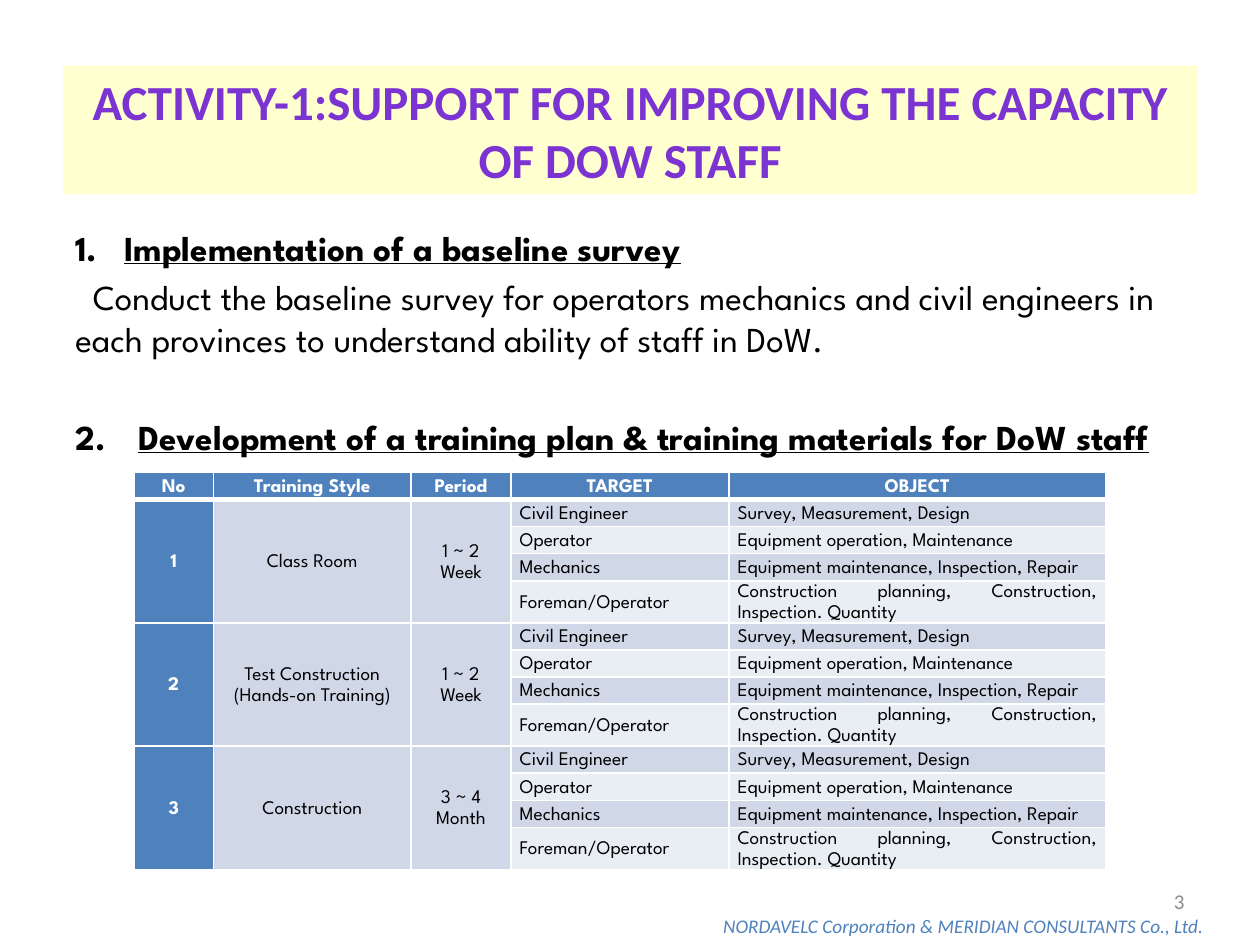
from dataclasses import dataclass

import pptx
import pptx.dml.color
import pptx.enum.shapes
import pptx.enum.text
import pptx.oxml
import pptx.oxml.ns
import pptx.util
from lxml import etree

Pt = pptx.util.Pt
ALIGN = pptx.enum.text.PP_ALIGN
MIDDLE = pptx.enum.text.MSO_ANCHOR.MIDDLE


@dataclass(frozen=True)
class Theme:
    heading_font: str = "Calibri"
    body_font: str = "League Spartan"
    black: str = "000000"
    white: str = "FFFFFF"
    purple: str = "7B34D2"
    yellow: str = "FFFF66"
    blue: str = "4F81BD"
    grey: str = "8C8C8C"
    dark_band: str = "D0D8E8"
    light_band: str = "E9EDF4"
    title_size: float = 28
    body_size: float = 20
    number_size: float = 12
    small_size: float = 11


THEME = Theme()
HEADINGS = ["No", "Training Style", "Period", "TARGET", "OBJECT"]
COURSES = [
    (["1"], ["Class Room"], ["1 ~ 2", "Week"]),
    (["2"], ["Test Construction", "(Hands-on Training)"], ["1 ~ 2", "Week"]),
    (["3"], ["Construction"], ["3 ~ 4", "Month"]),
]
TARGETS = [
    ("Civil Engineer", "Survey, Measurement, Design"),
    ("Operator", "Equipment operation, Maintenance"),
    ("Mechanics", "Equipment maintenance, Inspection, Repair"),
    ("Foreman/Operator", "Construction planning, Construction, Inspection. Quantity"),
]
COLUMN_WIDTHS = [45.5, 113, 57, 124.5, 215.5]
ROW_HEIGHT, TALL_ROW_HEIGHT = 15.5, 24


def rgb(color):
    return pptx.dml.color.RGBColor.from_string(color)


def add_child(parent, tag, **attributes):
    child = etree.SubElement(parent, pptx.oxml.ns.qn(tag))
    for name, value in attributes.items():
        child.set(name, str(value))
    return child


def add_span(para, text, font, size, color, bold=False, italic=False, underline=False):
    span = para.add_run()
    span.text = text
    span.font.name = font
    span.font.size = Pt(size)
    span.font.color.rgb = rgb(color)
    span.font.bold, span.font.italic, span.font.underline = bold, italic, underline


def add_text_box(page, box):
    frame = page.shapes.add_textbox(*map(Pt, box)).text_frame
    frame.word_wrap = True
    return frame


def add_title(page, box):
    banner = page.shapes.add_shape(
        pptx.enum.shapes.MSO_SHAPE.RECTANGLE, *map(Pt, box))
    banner.shadow.inherit = False
    banner.line.fill.background()
    banner.fill.solid()
    banner.fill.fore_color.rgb = rgb(THEME.yellow)
    fill_color = banner.fill._xPr.find(".//" + pptx.oxml.ns.qn("a:srgbClr"))
    add_child(fill_color, "a:alpha", val=30000)
    frame = banner.text_frame
    frame.word_wrap = True
    frame.vertical_anchor = MIDDLE
    para = frame.paragraphs[0]
    para.alignment = ALIGN.CENTER
    add_span(para, "ACTIVITY-1:SUPPORT FOR IMPROVING THE CAPACITY OF DOW STAFF",
             THEME.heading_font, THEME.title_size, THEME.purple, bold=True)


def add_numbered_heading(para, number, text, indent, space_before):
    para.space_before = Pt(space_before)
    properties = para._p.get_or_add_pPr()
    properties.set("marL", str(Pt(indent)))
    properties.set("indent", str(-Pt(indent)))
    add_child(properties, "a:buFont", typeface=THEME.body_font)
    add_child(properties, "a:buAutoNum", type="arabicPeriod", startAt=number)
    add_span(para, text, THEME.body_font, THEME.body_size, THEME.black,
             bold=True, underline=True)


def add_body(page, box):
    frame = add_text_box(page, box)
    add_numbered_heading(frame.paragraphs[0], 1,
                         "Implementation of a baseline survey", 28, 4)
    para = frame.add_paragraph()
    para.space_before = Pt(4)
    para._p.get_or_add_pPr().set("indent", str(Pt(10)))
    add_span(para, "Conduct the baseline survey for operators mechanics and civil "
             "engineers in each provinces to understand ability of staff in DoW.",
             THEME.body_font, THEME.body_size, THEME.black)
    add_numbered_heading(
        frame.add_paragraph(), 2,
        "Development of a training plan & training materials for DoW staff", 36, 32)


def set_borders(cell, top=1, bottom=1):
    properties = cell._tc.get_or_add_tcPr()
    widths = {"a:lnL": 1, "a:lnR": 1, "a:lnT": top, "a:lnB": bottom}
    for position, (tag, width) in enumerate(widths.items()):
        line = add_child(properties, tag, w=Pt(width))
        add_child(add_child(line, "a:solidFill"), "a:srgbClr", val=THEME.white)
        properties.insert(position, line)


def fill_cell(cell, lines, fill, align=ALIGN.CENTER, strong=False):
    cell.fill.solid()
    cell.fill.fore_color.rgb = rgb(fill)
    cell.vertical_anchor = MIDDLE
    cell.margin_left = cell.margin_right = Pt(5)
    cell.margin_top = cell.margin_bottom = Pt(0)
    frame = cell.text_frame
    for index, text in enumerate(lines):
        para = frame.add_paragraph() if index else frame.paragraphs[0]
        para.alignment = align
        para.line_spacing = Pt(12)
        add_span(para, text, THEME.body_font, THEME.small_size,
                 THEME.white if strong else THEME.black, bold=strong)


def add_training_table(page, box):
    row_count = 1 + len(COURSES) * len(TARGETS)
    table = page.shapes.add_table(
        row_count, len(HEADINGS), *map(Pt, box)).table
    for column, width in zip(table.columns, COLUMN_WIDTHS):
        column.width = Pt(width)
    for index, row in enumerate(table.rows):
        is_tall = index and index % len(TARGETS) == 0
        row.height = Pt(TALL_ROW_HEIGHT if is_tall else ROW_HEIGHT)
        for cell in row.cells:
            set_borders(cell, top=3 if index == 1 else 1, bottom=1 if index else 3)

    for column, heading in enumerate(HEADINGS):
        fill_cell(table.cell(0, column), [heading], THEME.blue, strong=True)
    for course_index, course in enumerate(COURSES):
        first = 1 + course_index * len(TARGETS)
        for column, lines in enumerate(course):
            cell = table.cell(first, column)
            cell.merge(table.cell(first + len(TARGETS) - 1, column))
            fill_cell(cell, lines, THEME.dark_band if column else THEME.blue,
                      strong=column == 0)
        for offset, texts in enumerate(TARGETS):
            band = THEME.light_band if offset % 2 else THEME.dark_band
            for column, text in enumerate(texts, start=len(course)):
                fill_cell(table.cell(first + offset, column), [text], band,
                          ALIGN.JUSTIFY)


def add_page_number(page, box):
    frame = add_text_box(page, box)
    frame.vertical_anchor = MIDDLE
    para = frame.paragraphs[0]
    para.alignment = ALIGN.RIGHT
    add_span(para, "3", THEME.heading_font, THEME.number_size, THEME.grey)


def add_footer(page, box):
    para = add_text_box(page, box).paragraphs[0]
    para.alignment = ALIGN.RIGHT
    add_span(para, "NORDAVELC Corporation & MERIDIAN CONSULTANTS Co., Ltd.",
             THEME.heading_font, THEME.small_size, THEME.blue, italic=True)


def main():
    deck = pptx.Presentation()
    deck.slide_width, deck.slide_height = Pt(720), Pt(540)
    page = deck.slides.add_slide(deck.slide_layouts[6])
    add_footer(page, (335, 519, 360, 21))
    add_title(page, (36, 37.5, 648, 73.5))
    add_body(page, (36, 126, 670, 356))
    add_page_number(page, (516, 500.5, 168, 29))
    add_training_table(page, (76.5, 270, sum(COLUMN_WIDTHS), 227))
    deck.save("out.pptx")


if __name__ == "__main__":
    main()
